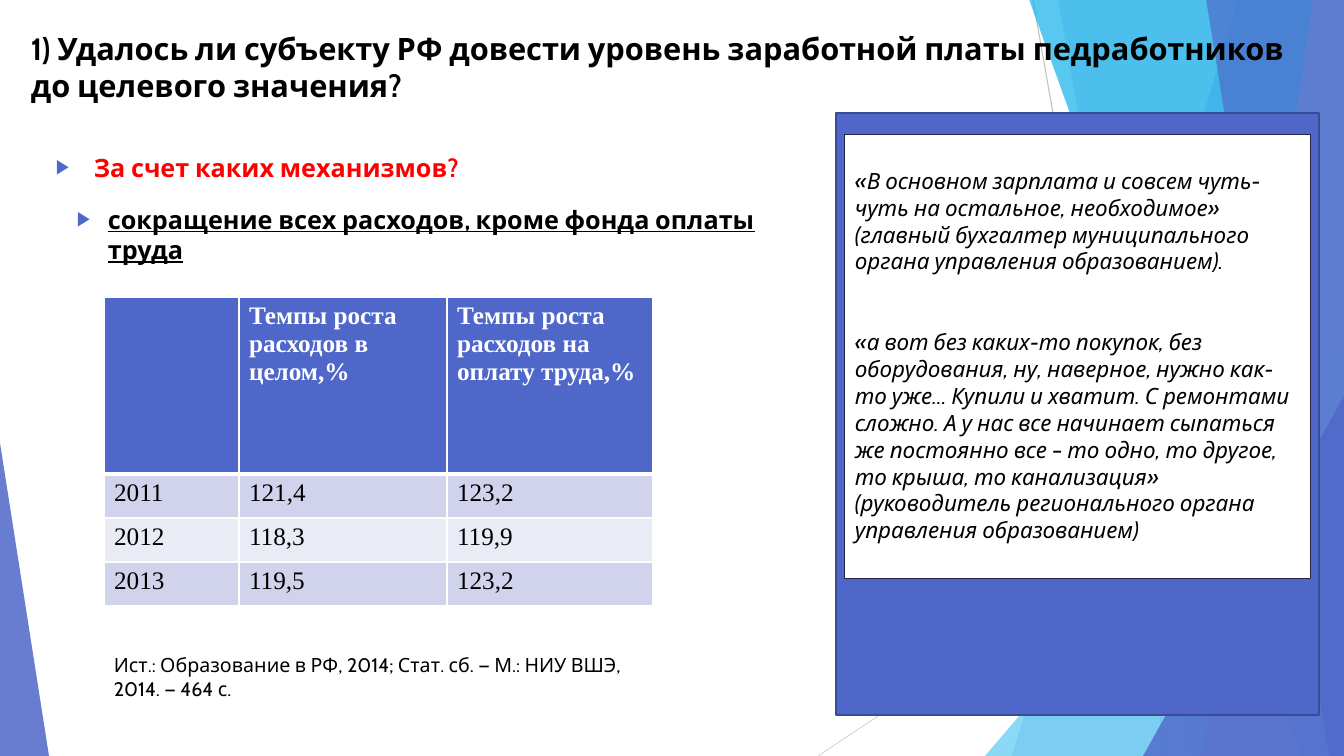
from lxml.etree import SubElement
from pptx import Presentation
from pptx.dml.color import RGBColor
from pptx.enum.shapes import MSO_CONNECTOR, MSO_SHAPE
from pptx.enum.text import MSO_ANCHOR, PP_ALIGN
from pptx.oxml.ns import qn
from pptx.util import Pt

TITLE = ("1) Удалось ли субъекту РФ довести уровень заработной платы "
         "педработников до целевого значения?")
ASK = "За счет каких механизмов?"
ANSWER = "сокращение всех расходов, кроме фонда оплаты труда"
QUOTES = [
    "«В основном зарплата и совсем чуть-чуть на остальное, необходимое» "
    "(главный бухгалтер муниципального органа управления образованием).",
    "«а вот без каких-то покупок, без оборудования, ну, наверное, нужно "
    "как-то уже… Купили и хватит. С ремонтами сложно. А у нас все начинает "
    "сыпаться же постоянно все – то одно, то другое, то крыша, то "
    "канализация» (руководитель регионального органа управления образованием)",
]
RATES = [
    ("", "Темпы роста расходов в целом,%", "Темпы роста расходов на оплату труда,%"),
    ("2011", "121,4", "123,2"),
    ("2012", "118,3", "119,9"),
    ("2013", "119,5", "123,2"),
]
SOURCE = "Ист.: Образование в РФ, 2014; Стат. сб. — М.: НИУ ВШЭ, 2014. — 464 с."

THEME = dict(
    font="Cabin", serif="Times New Roman",
    black="000000", white="FFFFFF", red="FF0000", blue="4E67C8",
    edge="3A4C94", navy="212745", odd="D0D3EB", even="E9EBF5",
    title=22, body=18, quote=16, note=14,
)
WIDE, HIGH = 1344, 756
PX = 914400 / 100.8
COLS, ROWS = (135, 208, 206), (177, 44, 44, 44)

# Lines: start, end, colour
RAYS = [(1033, 0, 1167, HIGH, "BFBFBF"), (WIDE, 406, 818, HIGH, "D9D9D9")]
# Bands reach the right edge: top x, bottom x, colour, opacity %
# Wedges: left, top, width, height, apex, colour, opacity %
DECOR = [
    (1238, 1012, "4E67C8", 30),
    (1058, 1192, "4E67C8", 20),
    (985, 336, 359, 420, 1, "5ECCF3", 72),
    (1029, 1301, "12B2EB", 70),
    (1313, 1202, "95A4DE", 70),
    (1206, 1329, "4E67C8", 65),
    (1143, 396, 201, 360, 1, "4E67C8", 80),
    (0, 443, 49, 313, 0, "4E67C8", 85),
]


def px(*sizes):
    return [round(size * PX) for size in sizes]


def rgb(name):
    return RGBColor.from_string(THEME.get(name, name))


def paint(shape, color, edge=None, width=0):
    shape.shadow.inherit = False
    shape.fill.solid()
    shape.fill.fore_color.rgb = rgb(color)
    if edge:
        shape.line.color.rgb = rgb(edge)
        shape.line.width = Pt(width)
    else:
        shape.line.fill.background()


def style(para, size, color="black", face="font", bold=False, italic=False):
    font = para.font
    font.name, font.size = THEME[face], Pt(THEME[size])
    font.bold, font.italic = bold, italic
    font.color.rgb = rgb(color)


def label(slide, box, text, size, color="black", bold=False):
    frame = slide.shapes.add_textbox(*px(*box)).text_frame
    frame.word_wrap = True
    para = frame.paragraphs[0]
    para.text = text
    style(para, size, color, bold=bold)
    return para


def bullet(para, left, hang):
    props = para._p.get_or_add_pPr()
    left, hang = px(left, hang)
    props.set("marL", str(left))
    props.set("indent", str(-hang))
    marks = []
    for tag, key, value in (("buSzPct", "val", "80000"),
                            ("buFont", "typeface", "Arial"),
                            ("buChar", "char", "▶")):
        mark = SubElement(props, qn("a:" + tag))
        mark.set(key, value)
        marks.append(mark)
    tint = SubElement(props, qn("a:buClr"))
    SubElement(tint, qn("a:srgbClr")).set("val", THEME["blue"])
    marks[0].addprevious(tint)
    # Text defaults come after bullet marks
    for item in props.findall(qn("a:defRPr")):
        props.append(item)


def border(cell, low):
    props = cell._tc.get_or_add_tcPr()
    for spot, (side, width) in enumerate((("L", 1), ("R", 1), ("T", 1), ("B", low))):
        line = SubElement(props, qn("a:ln" + side))
        line.set("w", str(Pt(width)))
        fill = SubElement(line, qn("a:solidFill"))
        SubElement(fill, qn("a:srgbClr")).set("val", THEME["white"])
        props.insert(spot, line)


def decor(slide):
    for *ends, color in RAYS:
        ray = slide.shapes.add_connector(MSO_CONNECTOR.STRAIGHT, *px(*ends))
        ray.line.color.rgb = rgb(color)
        ray.line.width = Pt(0.75)
        SubElement(ray._element.spPr, qn("a:effectLst"))
    for *place, color, alpha in DECOR:
        if len(place) == 2:
            top, low = place
            path = slide.shapes.build_freeform(top, -1, scale=PX)
            path.add_line_segments([(WIDE, -1), (WIDE, HIGH), (low, HIGH)])
            part = path.convert_to_shape()
        else:
            *box, apex = place
            part = slide.shapes.add_shape(MSO_SHAPE.ISOSCELES_TRIANGLE, *px(*box))
            part.adjustments[0] = apex
        paint(part, color)
        tint = part._element.spPr.find(qn("a:solidFill"))[0]
        SubElement(tint, qn("a:alpha")).set("val", str(alpha * 1000))


def quotes(slide):
    panel = slide.shapes.add_shape(MSO_SHAPE.RECTANGLE, *px(836, 113, 483, 602))
    paint(panel, "blue", "edge", 1.5)
    card = slide.shapes.add_shape(MSO_SHAPE.RECTANGLE, *px(845, 135, 466, 444))
    paint(card, "white", "navy", 0.75)
    frame = card.text_frame
    frame.word_wrap = True
    frame.vertical_anchor = MSO_ANCHOR.TOP
    frame.margin_top = px(32)[0]
    for spot, text in enumerate(QUOTES):
        para = frame.add_paragraph() if spot else frame.paragraphs[0]
        para.text = text
        para.alignment = PP_ALIGN.LEFT
        para.space_before = Pt(38.5 * spot)
        style(para, "quote", italic=True)


def rates(slide):
    box = px(104, 297, sum(COLS), sum(ROWS))
    table = slide.shapes.add_table(len(ROWS), len(COLS), *box).table
    for col, width in zip(table.columns, px(*COLS)):
        col.width = width
    for row, height in zip(table.rows, px(*ROWS)):
        row.height = height
    for y, line in enumerate(RATES):
        head = y == 0
        fill = "blue" if head else "odd" if y % 2 else "even"
        for x, text in enumerate(line):
            cell = table.cell(y, x)
            cell.text = text
            cell.fill.solid()
            cell.fill.fore_color.rgb = rgb(fill)
            border(cell, 3 if head else 1)
            style(cell.text_frame.paragraphs[0], "body",
                  "white" if head else "black", "serif", bold=head)


def main():
    deck = Presentation()
    deck.slide_width, deck.slide_height = px(WIDE, HIGH)
    slide = deck.slides.add_slide(deck.slide_layouts[6])
    decor(slide)
    label(slide, (21, 25, 1280, 86), TITLE, "title", bold=True)
    bullet(label(slide, (46, 147, 806, 155), ASK, "body", "red", True), 38, 38)
    answer = label(slide, (16, 199, 806, 82), ANSWER, "body", bold=True)
    answer.font.underline = True
    bullet(answer, 82, 31)
    quotes(slide)
    rates(slide)
    label(slide, (104, 648, 567, 57), SOURCE, "note")
    deck.save("out.pptx")


if __name__ == "__main__":
    main()
